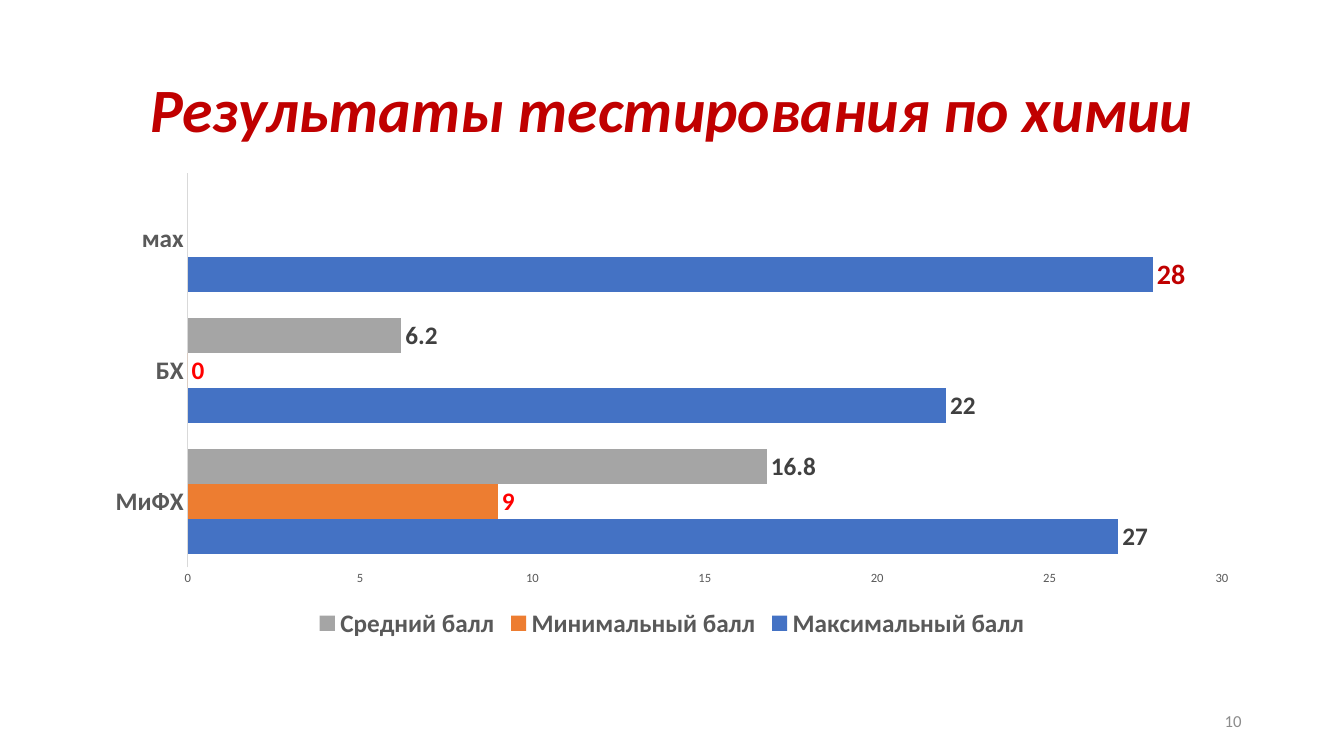
from pptx import Presentation
from pptx import util as u
from pptx.chart.data import CategoryChartData
from pptx.dml.color import RGBColor
from pptx.enum import chart as charts, text

CRIMSON = RGBColor(0xC0, 0x00, 0x00)
RED = RGBColor(0xFF, 0x00, 0x00)
BLUE = RGBColor(0x44, 0x72, 0xC4)
ORANGE = RGBColor(0xED, 0x7D, 0x31)
SILVER = RGBColor(0xA5, 0xA5, 0xA5)
CHARCOAL = RGBColor(0x40, 0x40, 0x40)
SLATE = RGBColor(0x59, 0x59, 0x59)
GRAY = RGBColor(0x8C, 0x8C, 0x8C)
RULE = RGBColor(0xD9, 0xD9, 0xD9)

SUBJECTS = ["МиФХ", "БХ", "мах"]
SCORES = [
    ("Максимальный балл", [27, 22, 28], BLUE, CHARCOAL),
    ("Минимальный балл", [9, 0, None], ORANGE, RED),
    ("Средний балл", [16.8, 6.2, None], SILVER, CHARCOAL),
]


class Slide:
    """Hold the style and the current slide, and add elements measured in px."""

    FONT = "Calibri"
    PX = 9525

    def __init__(self, deck):
        self.page = deck.slides.add_slide(deck.slide_layouts[5])

    def lengths(self, *px):
        return [u.Emu(value * self.PX) for value in px]

    def style(self, font, size, color, bold=False, italic=False):
        font.name, font.size = self.FONT, u.Pt(size)
        font.bold, font.italic = bold, italic
        font.color.rgb = color

    def set_words(self, box, words, align, size, color, **emphasis):
        frame = box.text_frame
        frame.word_wrap = True
        frame.auto_size = text.MSO_AUTO_SIZE.NONE
        frame.vertical_anchor = text.MSO_ANCHOR.MIDDLE
        frame.text = words
        para = frame.paragraphs[0]
        para.alignment = align
        self.style(para.font, size, color, **emphasis)
        return para

    def title(self, words, *place):
        box = self.page.shapes.title
        box.left, box.top, box.width, box.height = self.lengths(*place)
        para = self.set_words(box, words, text.PP_ALIGN.CENTER, 44, CRIMSON, bold=True, italic=True)
        para.line_spacing = 0.9

    def page_number(self, number, *place):
        box = self.page.shapes.add_textbox(*self.lengths(*place))
        self.set_words(box, number, text.PP_ALIGN.RIGHT, 12, GRAY)

    def bar_chart(self, categories, rows, *place):
        data = CategoryChartData()
        data.categories = categories
        for name, values, _, _ in rows:
            data.add_series(name, values)
        chart = self.page.shapes.add_chart(
            charts.XL_CHART_TYPE.BAR_CLUSTERED, *self.lengths(*place), data
        ).chart
        chart.has_title = False
        chart.font.name, chart.font.size = self.FONT, u.Pt(10)
        plot = chart.plots[0]
        plot.gap_width, plot.overlap = 75, 0
        plot.vary_by_categories = False
        for series, (_, _, fill, label) in zip(plot.series, rows):
            self.series(series, fill, label)
        self.axes(chart)
        chart.has_legend = True
        chart.legend.position = charts.XL_LEGEND_POSITION.BOTTOM
        chart.legend.include_in_layout = False
        self.style(chart.legend.font, 18, SLATE, bold=True)
        return chart

    def series(self, series, fill, label):
        series.format.fill.solid()
        series.format.fill.fore_color.rgb = fill
        series.invert_if_negative = False
        labels = series.data_labels
        labels.show_value = True
        labels.position = charts.XL_LABEL_POSITION.OUTSIDE_END
        self.style(labels.font, 18, label, bold=True)

    def axes(self, chart):
        for axis, size, bold in ((chart.category_axis, 18, True), (chart.value_axis, 9, False)):
            axis.has_major_gridlines = False
            axis.major_tick_mark = axis.minor_tick_mark = charts.XL_TICK_MARK.NONE
            self.style(axis.tick_labels.font, size, SLATE, bold=bold)
        chart.category_axis.format.line.color.rgb = RULE
        chart.category_axis.format.line.width = u.Pt(0.75)
        scale = chart.value_axis
        scale.format.line.fill.background()
        scale.minimum_scale, scale.maximum_scale, scale.major_unit = 0, 30, 5

    def highlight(self, point, size, color):
        label = point.data_label
        self.style(label.font, size, color, bold=True)
        label.position = charts.XL_LABEL_POSITION.OUTSIDE_END


def main():
    deck = Presentation()
    deck.slide_width, deck.slide_height = u.Emu(1280 * Slide.PX), u.Emu(720 * Slide.PX)
    slide = Slide(deck)
    chart = slide.bar_chart(SUBJECTS, SCORES, 88, 156, 1104, 457)
    slide.highlight(chart.plots[0].series[0].points[2], 20, CRIMSON)
    slide.title("Результаты тестирования по химии", 88, 38, 1104, 139)
    slide.page_number("10", 904, 667, 288, 38)
    deck.save("out.pptx")


if __name__ == "__main__":
    main()
